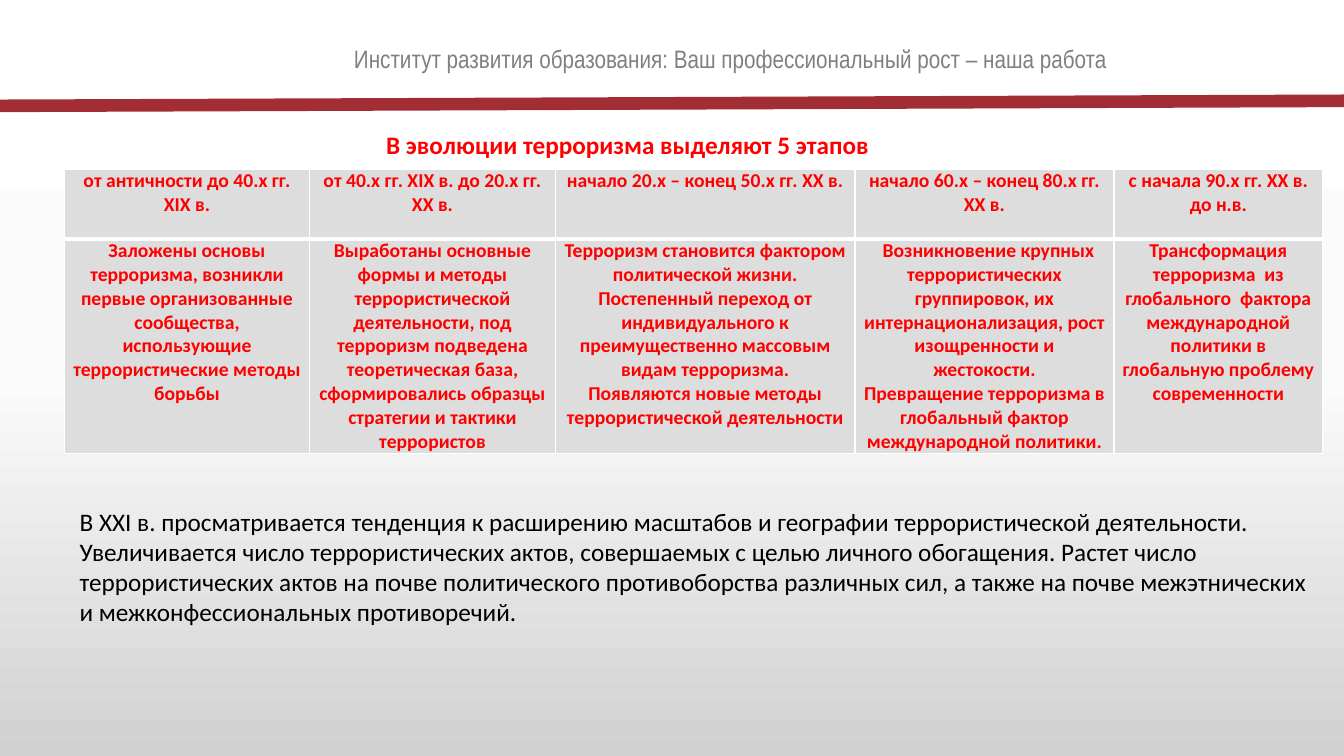
from copy import deepcopy
from lxml.etree import SubElement
from pptx import Presentation
from pptx.dml.color import RGBColor as RGB
from pptx.enum.shapes import MSO_CONNECTOR as Line
from pptx.enum.text import MSO_ANCHOR as Anchor, MSO_AUTO_SIZE as Fit, PP_ALIGN as Align
from pptx.oxml.ns import qn
from pptx.util import Inches, Pt

MOTTO = "Институт развития образования: Ваш профессиональный рост – наша работа"
TITLE = "В эволюции терроризма выделяют 5 этапов"
# column width, period, paragraphs
STAGES = [
    (2.43, "от античности до 40.х гг. XIX в.", [
        "Заложены основы терроризма, возникли первые организованные сообщества, "
        "использующие террористические методы борьбы"]),
    (2.44, "от 40.х гг. XIX в. до 20.х гг. XX в.", [
        "Выработаны основные формы и методы террористической деятельности, под терроризм "
        "подведена теоретическая база, сформировались образцы стратегии и тактики террористов"]),
    (2.97, "начало 20.х – конец 50.х гг. XX в.", [
        "Терроризм становится фактором политической жизни.",
        "Постепенный переход от индивидуального к преимущественно массовым видам терроризма.",
        "Появляются новые методы террористической деятельности"]),
    (2.57, "начало 60.х – конец 80.х гг. XX в.", [
        "Возникновение крупных террористических группировок, их интернационализация, "
        "рост изощренности и жестокости.",
        "Превращение терроризма в глобальный фактор международной политики."]),
    (2.07, "с начала 90.х гг. ХХ в. до н.в.", [
        "Трансформация терроризма  из глобального  фактора международной политики "
        "в глобальную проблему современности"]),
]
TREND = (
    "В XXI в. просматривается тенденция к расширению масштабов и географии террористической "
    "деятельности. Увеличивается число террористических актов, совершаемых с целью личного "
    "обогащения. Растет число террористических актов на почве политического противоборства "
    "различных сил, а также на почве межэтнических и межконфессиональных противоречий.")

THEME = {
    "motto": {"name": "Arial Narrow", "size": Pt(18), "bold": False, "color": "808080"},
    "title": {"name": "Calibri", "size": Pt(18), "bold": True, "color": "FF0000"},
    "cell": {"name": "Calibri", "size": Pt(14), "bold": True, "color": "FF0000"},
    "trend": {"name": "Calibri", "size": Pt(18), "bold": False, "color": "000000"},
    "rule": "A32D35", "fill": "DDDDDD", "edge": "FFFFFF",
    "back": [(0, "FFFFFF"), (0.5, "FBFBFB"), (1, "D1D1D1")],
}
ROWS = [0.69, 2.11]


def write(frame, lines, style, align):
    """Fill a text frame with one paragraph per line in a theme style."""
    frame.word_wrap = True
    for i, line in enumerate(lines):
        para = frame.paragraphs[0] if i == 0 else frame.add_paragraph()
        para.alignment = align
        para.space_before = Pt(0)
        run = para.add_run()
        run.text = line
        for key, value in THEME[style].items():
            if key == "color":
                run.font.color.rgb = RGB.from_string(value)
            else:
                setattr(run.font, key, value)


def place(shape, left, top, width, height):
    box = {"left": left, "top": top, "width": width, "height": height}
    for key, value in box.items():
        setattr(shape, key, Inches(value))
    frame = shape.text_frame
    frame.auto_size = Fit.NONE
    frame.vertical_anchor = Anchor.TOP
    return frame


def paint(slide):
    """Give the slide its vertical three-stop gradient."""
    fill = slide.background.fill
    fill.gradient()
    fill.gradient_angle = 270
    first = next(slide.element.iter(qn("a:gs")))
    first.addnext(deepcopy(first))
    for stop, (spot, color) in zip(fill.gradient_stops, THEME["back"]):
        stop.position = spot
        stop.color.rgb = RGB.from_string(color)


def edge(cell, row):
    """Draw the cell borders; the one between the two rows is thick."""
    props = cell._tc.get_or_add_tcPr()
    thick = "B" if row == 0 else "T"
    for side in "LRTB":
        line = SubElement(props, qn(f"a:ln{side}"), w=str(Pt(3 if side == thick else 1)))
        solid = SubElement(line, qn("a:solidFill"))
        SubElement(solid, qn("a:srgbClr"), val=THEME["edge"])


def grid(slide):
    wide = sum(stage[0] for stage in STAGES)
    table = slide.shapes.add_table(
        len(ROWS), len(STAGES), Inches(0.64), Inches(1.68),
        Inches(wide), Inches(sum(ROWS))).table
    table.horz_banding = False
    for row, high in zip(table.rows, ROWS):
        row.height = Inches(high)
    pads = {"margin_left": Inches(0.07), "margin_right": Inches(0.07),
            "margin_top": 0, "margin_bottom": 0}
    for col, (width, period, lines) in enumerate(STAGES):
        table.columns[col].width = Inches(width)
        for row, text in enumerate([[period], lines]):
            cell = table.cell(row, col)
            for key, value in pads.items():
                setattr(cell, key, value)
            edge(cell, row)
            cell.fill.solid()
            cell.fill.fore_color.rgb = RGB.from_string(THEME["fill"])
            write(cell.text_frame, text, "cell", Align.CENTER)
    indent = table.cell(1, 3).text_frame.paragraphs[0]._p.get_or_add_pPr()
    indent.set("indent", str(Inches(0.08)))


def main():
    deck = Presentation()
    deck.slide_width, deck.slide_height = Inches(13.33), Inches(7.5)
    slide = deck.slides.add_slide(deck.slide_layouts[1])
    paint(slide)

    rule = slide.shapes.add_connector(
        Line.STRAIGHT, 0, Inches(1.05), Inches(13.33), Inches(1))
    rule.line.color.rgb = RGB.from_string(THEME["rule"])
    rule.line.width = Pt(9)
    SubElement(rule._element.spPr, qn("a:effectLst"))

    motto = slide.shapes.add_textbox(0, 0, 0, 0)
    write(place(motto, 1.58, 0.38, 11.33, 0.4), [MOTTO], "motto", Align.CENTER)
    title, body = slide.placeholders
    write(place(title, 3.73, 1.23, 6.04, 0.4), [TITLE], "title", Align.LEFT)
    grid(slide)
    frame = place(body, 0.69, 4.97, 12.42, 1.31)
    write(frame, [TREND], "trend", Align.LEFT)
    props = frame.paragraphs[0]._p.get_or_add_pPr()
    for key in ("marL", "indent"):
        props.set(key, "0")
    SubElement(props, qn("a:buNone"))
    deck.save("out.pptx")


if __name__ == "__main__":
    main()
